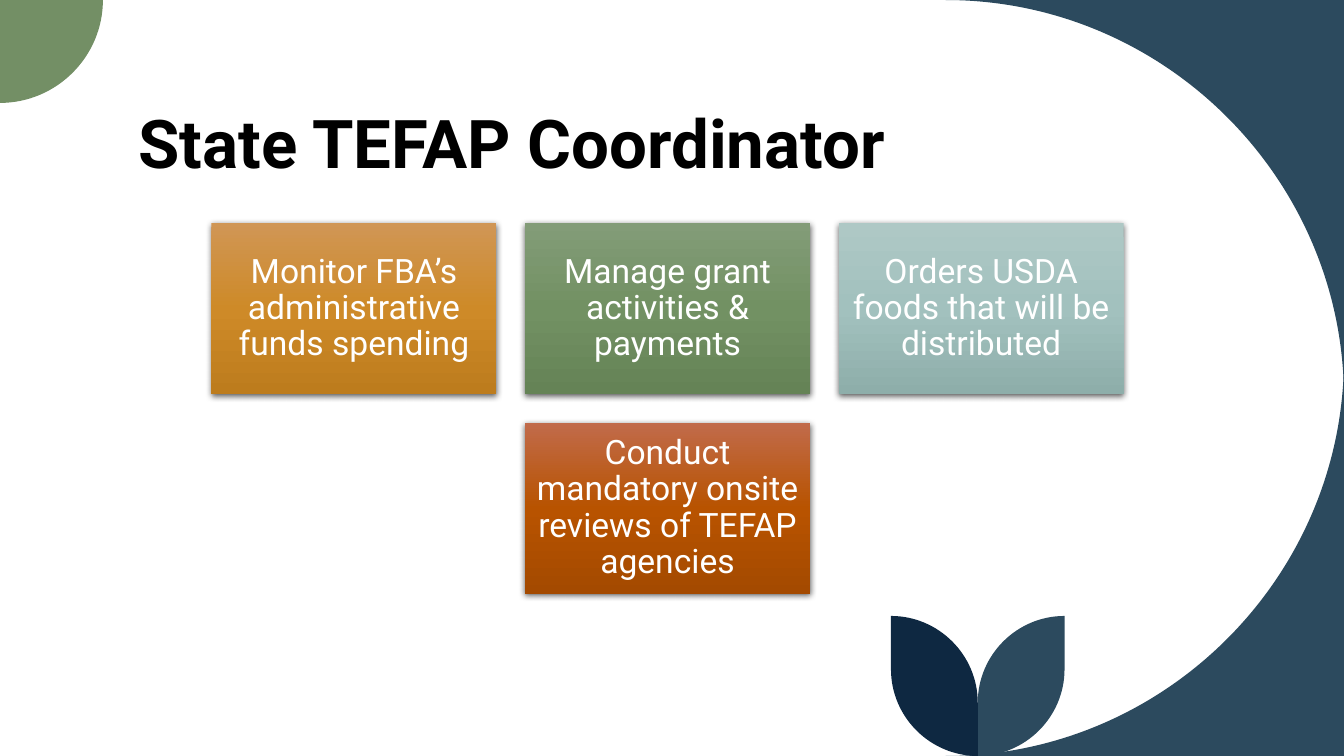
from pptx import Presentation
from pptx.dml.color import RGBColor
from pptx.enum.shapes import MSO_SHAPE
from pptx.enum.text import MSO_ANCHOR, PP_ALIGN
from pptx.oxml import parse_xml
from pptx.oxml.ns import nsdecls
from pptx.util import Pt

RECT = MSO_SHAPE.RECTANGLE
MIDDLE, BOTTOM = MSO_ANCHOR.MIDDLE, MSO_ANCHOR.BOTTOM
CENTER, LEFT = PP_ALIGN.CENTER, PP_ALIGN.LEFT

FONT = "Roboto"
WHITE = RGBColor(0xFF, 0xFF, 0xFF)
BLACK = RGBColor(0x00, 0x00, 0x00)
SLATE = RGBColor(0x2C, 0x4A, 0x5E)
NAVY = RGBColor(0x0E, 0x28, 0x41)
GREEN = RGBColor(0x73, 0x8F, 0x65)
# Gradient colours from top to bottom
AMBER = [RGBColor(0xD0, 0x96, 0x55), RGBColor(0xCE, 0x8A, 0x28), RGBColor(0xBD, 0x7C, 0x1D)]
SAGE = [RGBColor(0x83, 0x9C, 0x78), RGBColor(0x72, 0x91, 0x63), RGBColor(0x65, 0x83, 0x56)]
AQUA = [RGBColor(0xAE, 0xC8, 0xC5), RGBColor(0xA2, 0xC1, 0xBE), RGBColor(0x8E, 0xAE, 0xAA)]
RUST = [RGBColor(0xC1, 0x6B, 0x4B), RGBColor(0xB8, 0x53, 0x00), RGBColor(0xA4, 0x4A, 0x00)]

WIDE, HIGH = 960, 540
CARD_W, CARD_H, GAP = 203.6, 122.2, 20.4
CARD_X, CARD_Y = 151, 159.2
# Text, colours, column, row
CARDS = [
    ("Monitor FBA’s administrative funds spending", AMBER, 0, 0),
    ("Manage grant activities & payments", SAGE, 1, 0),
    ("Orders USDA foods that will be distributed", AQUA, 2, 0),
    ("Conduct mandatory onsite reviews of TEFAP agencies", RUST, 1, 1),
]


def bend(start, corner, end):
    """Bezier points of a quarter circle that rounds off the corner."""
    pull = 0.55
    near, far = (
        tuple(a + pull * (c - a) for a, c in zip(spot, corner))
        for spot in (start, end)
    )
    return [near, far, end]


def add_form(slide, start, parts, color):
    """Outline of parts: one point is a line, three are a curve."""
    spots = [(Pt(x), Pt(y)) for part in parts for x, y in part]
    pen = slide.shapes.build_freeform(Pt(start[0]), Pt(start[1]))
    pen.add_line_segments(spots, close=True)
    form = pen.convert_to_shape()
    form.shadow.inherit = False
    form.fill.solid()
    form.fill.fore_color.rgb = color
    form.line.fill.background()
    # Join the three lines of each curve
    lines = iter(form._element.xpath(".//a:lnTo"))
    for part in parts:
        group = [next(lines) for _ in part]
        if len(group) == 3:
            curve = parse_xml(f'<a:cubicBezTo {nsdecls("a")}/>')
            group[0].addprevious(curve)
            for line in group:
                curve.append(line[0])
                line.getparent().remove(line)


def add_leaf(slide, stem, side, color):
    """Leaf beside the stem: side is -1 for left, 1 for right."""
    top, r = 440, 62
    tip = stem + side * r
    upper = bend((tip, top), (stem, top), (stem, top + r))
    lower = bend((stem, HIGH), (tip, HIGH), (tip, HIGH - r))
    add_form(slide, (tip, top), [upper, [(stem, HIGH)], lower], color)


def add_edge(slide, y, turn):
    """Right-hand corner at height y, rounded towards height turn."""
    mid = WIDE - 284.5
    corner, end = (WIDE, y), (WIDE, turn)
    curve = bend((mid, y), corner, end)
    add_form(slide, corner, [[(mid, y)], curve], SLATE)


def set_text(shape, text, size, color, align, anchor, bold=False):
    frame = shape.text_frame
    frame.word_wrap = True
    frame.vertical_anchor = anchor
    para = frame.paragraphs[0]
    para.text = text
    para.alignment = align
    para.line_spacing = 0.9
    font = para.font
    font.name, font.size, font.bold = FONT, Pt(size), bold
    font.color.rgb = color


def add_card(slide, text, colors, col, row):
    left = CARD_X + col * (CARD_W + GAP)
    top = CARD_Y + row * (CARD_H + GAP)
    card = slide.shapes.add_shape(RECT, Pt(left), Pt(top), Pt(CARD_W), Pt(CARD_H))
    props = card._element.spPr
    # Vertical gradient
    stops = "".join(
        f'<a:gs pos="{i * 50000}"><a:srgbClr val="{color}"/></a:gs>'
        for i, color in enumerate(colors)
    )
    props.append(parse_xml(
        f'<a:gradFill {nsdecls("a")} rotWithShape="1"><a:gsLst>{stops}</a:gsLst>'
        '<a:lin ang="5400000" scaled="0"/></a:gradFill>'
    ))
    card.line.fill.background()
    # Soft shadow below
    props.append(parse_xml(
        f'<a:effectLst {nsdecls("a")}><a:outerShdw blurRad="{Pt(4.5)}" '
        f'dist="{Pt(1.5)}" dir="5400000" algn="ctr" rotWithShape="0">'
        '<a:srgbClr val="000000"><a:alpha val="63000"/></a:srgbClr>'
        '</a:outerShdw></a:effectLst>'
    ))
    set_text(card, text, 24, WHITE, CENTER, MIDDLE)
    frame = card.text_frame
    frame.margin_left = frame.margin_right = Pt(7.2)
    frame.margin_top = frame.margin_bottom = Pt(7.2)


def add_title(slide, text):
    box = slide.shapes.add_textbox(Pt(92), Pt(30.2), Pt(770), Pt(104.4))
    set_text(box, text, 48, BLACK, LEFT, BOTTOM, bold=True)


def main():
    deck = Presentation()
    deck.slide_width, deck.slide_height = Pt(WIDE), Pt(HIGH)
    slide = deck.slides.add_slide(deck.slide_layouts[6])

    # Corner shapes
    add_edge(slide, 0, 284.5)
    add_edge(slide, HIGH, 255.5)
    r = 73.5
    add_form(slide, (0, 0), [[(r, 0)], bend((r, 0), (r, r), (0, r))], GREEN)

    # Leaves
    add_leaf(slide, 698.4, 1, SLATE)
    add_leaf(slide, 698.4, -1, NAVY)

    # Title and cards
    add_title(slide, "State TEFAP Coordinator")
    for card in CARDS:
        add_card(slide, *card)

    deck.save("out.pptx")


if __name__ == "__main__":
    main()
